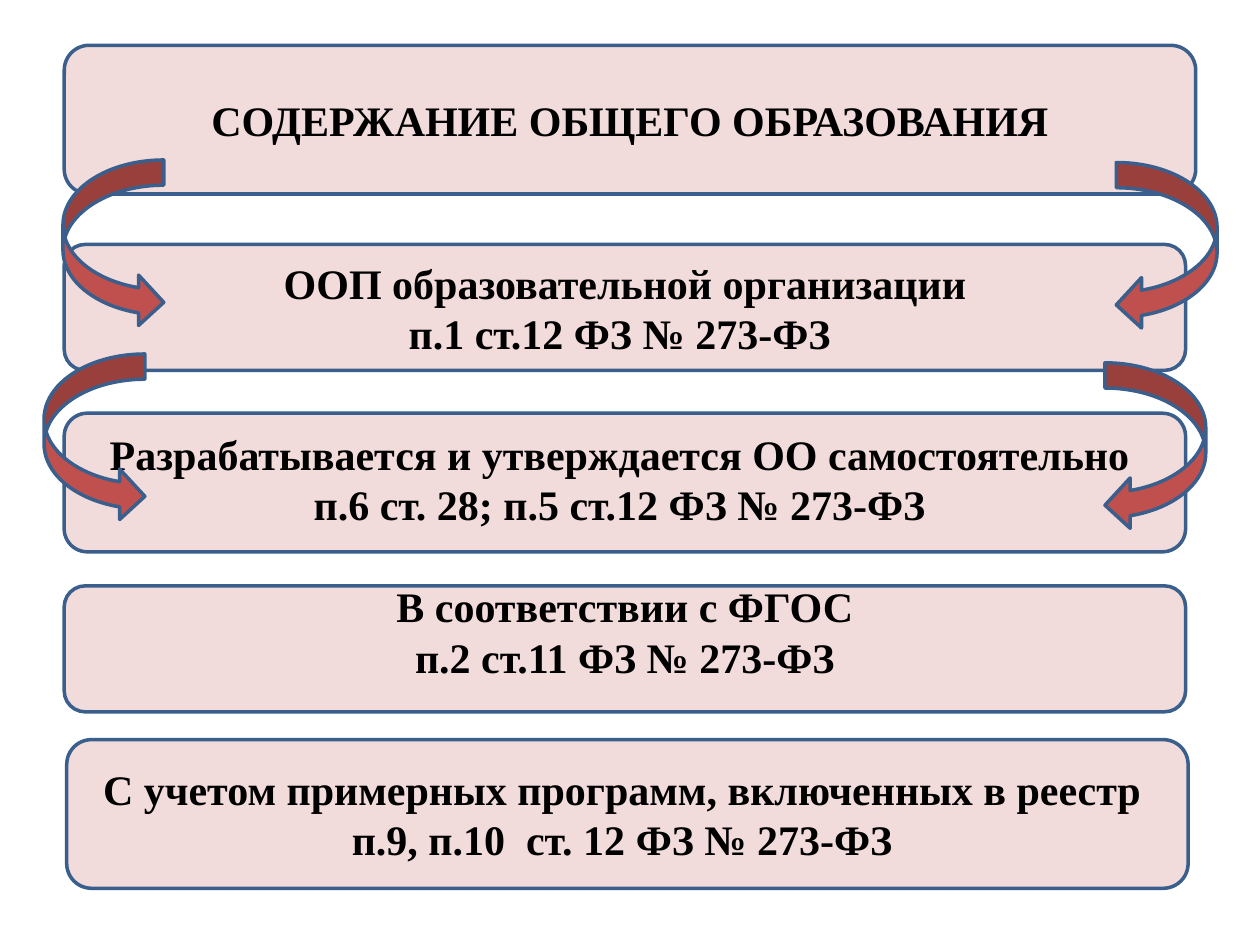
import pptx
import pptx.util
import pptx.dml.color
import pptx.enum.shapes
import pptx.enum.text

Inches = pptx.util.Inches
Pt = pptx.util.Pt
RGBColor = pptx.dml.color.RGBColor
Shape = pptx.enum.shapes.MSO_SHAPE

PINK = RGBColor(0xF2, 0xDC, 0xDB)
RED = RGBColor(0xC0, 0x50, 0x4D)
BLUE = RGBColor(0x3A, 0x5F, 0x8C)
BLACK = RGBColor(0, 0, 0)

deck = pptx.Presentation()
deck.slide_width = Inches(10)
deck.slide_height = Inches(7.5)
slide = deck.slides.add_slide(deck.slide_layouts[6])


def add_outlined_shape(kind, left, top, width, height, fill):
    shape = slide.shapes.add_shape(
        kind, Inches(left), Inches(top), Inches(width), Inches(height))
    shape.shadow.inherit = False
    shape.fill.solid()
    shape.fill.fore_color.rgb = fill
    shape.line.color.rgb = BLUE
    shape.line.width = Pt(2)
    return shape


# left, top, width, height, upward text shift, lines
boxes = [
    (0.51, 0.36, 8.98, 1.18, 0, ["СОДЕРЖАНИЕ ОБЩЕГО ОБРАЗОВАНИЯ"]),
    (0.51, 1.94, 8.9, 1, 0,
     ["ООП образовательной организации", "п.1 ст.12 ФЗ № 273-ФЗ "]),
    (0.51, 3.28, 8.9, 1.1, 0.03,
     ["Разрабатывается и утверждается ОО самостоятельно ",
      "п.6 ст. 28; п.5 ст.12 ФЗ № 273-ФЗ "]),
    (0.51, 4.65, 8.9, 1, 0.14,
     ["В соответствии с ФГОС", " п.2 ст.11 ФЗ № 273-ФЗ "]),
    (0.53, 5.87, 8.9, 1.18, 0,
     ["С учетом примерных программ, включенных в реестр ",
      "п.9, п.10  ст. 12 ФЗ № 273-ФЗ "]),
]
for left, top, width, height, shift, lines in boxes:
    box = add_outlined_shape(
        Shape.ROUNDED_RECTANGLE, left, top, width, height, PINK)
    frame = box.text_frame
    frame.word_wrap = True
    frame.vertical_anchor = pptx.enum.text.MSO_ANCHOR.MIDDLE
    frame.margin_top = Inches(0.05 - shift)
    frame.margin_bottom = Inches(0.05 + shift)
    frame.text = "\n".join(lines)
    for para in frame.paragraphs:
        para.alignment = pptx.enum.text.PP_ALIGN.CENTER
        for span in para.runs:
            span.font.name = "Times New Roman"
            span.font.size = Pt(24)
            span.font.bold = True
            span.font.color.rgb = BLACK

arrows = [
    (Shape.CURVED_LEFT_ARROW, 8.86, 1.29),
    (Shape.CURVED_RIGHT_ARROW, 0.5, 1.27),
    (Shape.CURVED_LEFT_ARROW, 8.77, 2.88),
    (Shape.CURVED_RIGHT_ARROW, 0.35, 2.81),
]
for kind, left, top in arrows:
    add_outlined_shape(kind, left, top, 0.8, 1.33, RED)

deck.save("out.pptx")
